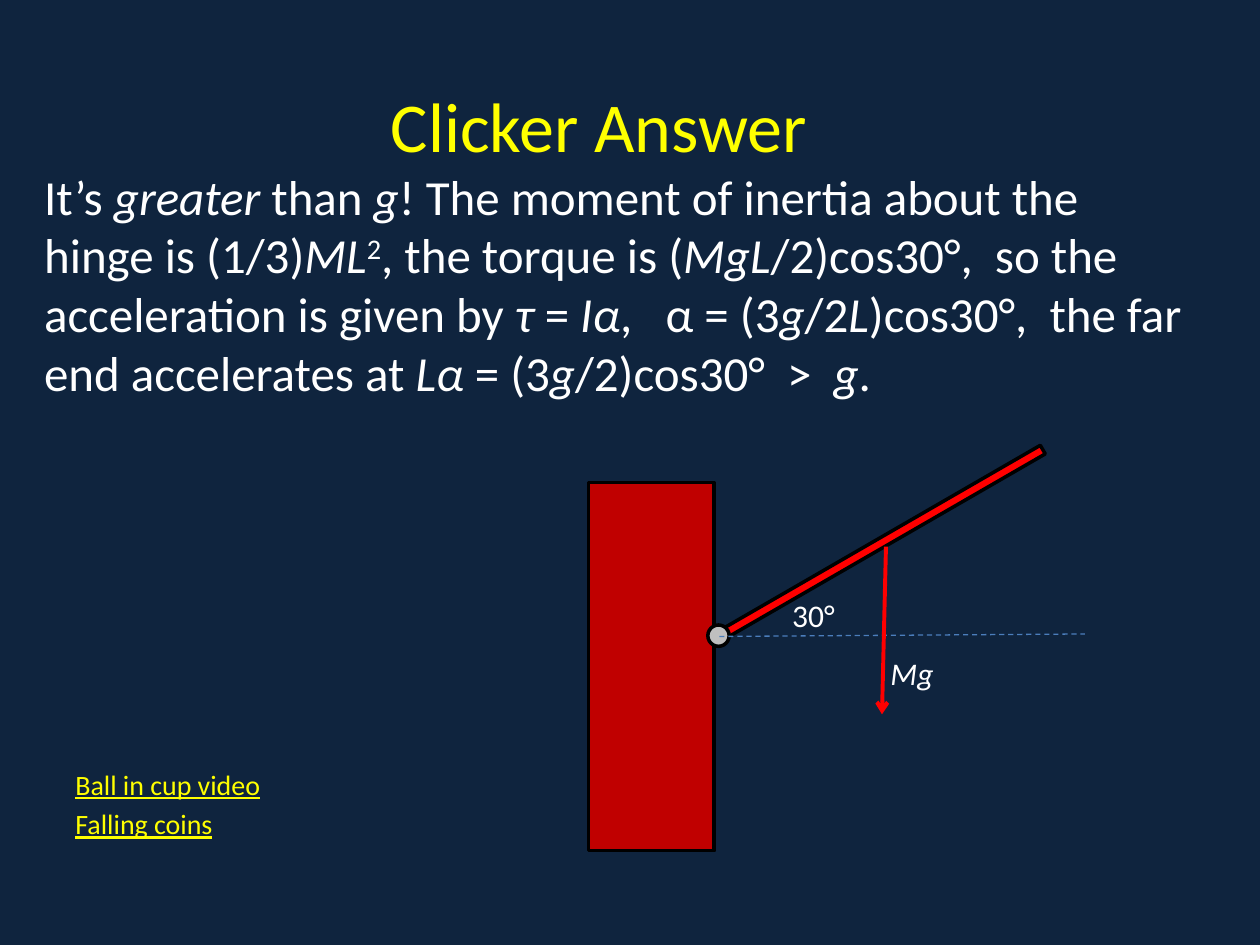
from dataclasses import dataclass, field
from typing import Optional

from lxml.etree import SubElement
from pptx import Presentation
from pptx.dml.color import RGBColor
from pptx.enum.dml import MSO_LINE_DASH_STYLE as Dash
from pptx.enum.shapes import MSO_CONNECTOR_TYPE as Connector, MSO_SHAPE as Preset
from pptx.enum.text import MSO_ANCHOR as Anchor
from pptx.oxml.ns import qn
from pptx.util import Cm, Pt

FONT = "Calibri"
YELLOW, WHITE, BLACK, RED = "FFFF00", "FFFFFF", "000000", "FF0000"


@dataclass
class Span:
    text: str
    format: dict = field(default_factory=dict)
    superscript: bool = False


@dataclass
class Paragraph:
    spans: list[Span]
    size: float
    color: str
    indent: float = 0
    space_after: float = 0


@dataclass
class TextBlock:
    left: float
    top: float
    width: float
    height: float
    paragraphs: list[Paragraph]
    anchor: Anchor = Anchor.TOP


@dataclass
class Body:
    preset: Preset
    left: float
    top: float
    width: float
    height: float
    fill: str
    rotation: float = 0


@dataclass
class Stroke:
    start: tuple[float, float]
    end: tuple[float, float]
    color: str
    weight: float
    dash: Optional[Dash] = None
    arrow: bool = False


def paint(target, color: str) -> None:
    target.rgb = RGBColor.from_string(color)


def italic(text: str) -> Span:
    return Span(text, {"italic": True})


def link(text: str, space_after: float = 0) -> Paragraph:
    return Paragraph([Span(text, {"underline": True})], 16, YELLOW, space_after=space_after)


def label(left: float, top: float, span: Span) -> TextBlock:
    return TextBlock(left, top, 1.9, 1.02, [Paragraph([span], 18, WHITE)])


def draw_text(page, block: TextBlock) -> None:
    box = page.shapes.add_textbox(Cm(block.left), Cm(block.top), Cm(block.width), Cm(block.height))
    frame = box.text_frame
    frame.word_wrap = True
    frame.vertical_anchor = block.anchor
    for index, content in enumerate(block.paragraphs):
        para = frame.add_paragraph() if index else frame.paragraphs[0]
        para.space_after = Pt(content.space_after)
        para._p.get_or_add_pPr().set("marL", str(Cm(content.indent)))
        for span in content.spans:
            run = para.add_run()
            run.text = span.text
            values = {"name": FONT, "size": Pt(content.size), **span.format}
            for name, value in values.items():
                setattr(run.font, name, value)
            paint(run.font.color, content.color)
            if span.superscript:
                run._r.get_or_add_rPr().set("baseline", "30000")


def draw_body(page, body: Body) -> None:
    shape = page.shapes.add_shape(
        body.preset, Cm(body.left), Cm(body.top), Cm(body.width), Cm(body.height)
    )
    shape.rotation = body.rotation
    shape.shadow.inherit = False
    shape.fill.solid()
    paint(shape.fill.fore_color, body.fill)
    shape.line.width = Pt(2)
    paint(shape.line.color, BLACK)


def draw_stroke(page, stroke: Stroke) -> None:
    points = [Cm(value) for value in (*stroke.start, *stroke.end)]
    connector = page.shapes.add_connector(Connector.STRAIGHT, *points)
    line = connector.line
    line.width = Pt(stroke.weight)
    paint(line.color, stroke.color)
    if stroke.dash:
        line.dash_style = stroke.dash
    properties = connector._element.spPr
    if stroke.arrow:
        SubElement(properties.find(qn("a:ln")), qn("a:tailEnd"), type="arrow")
    SubElement(properties, qn("a:effectLst"))


HEADING = Paragraph([Span("Clicker Answer")], 40, YELLOW, indent=6.99)
ANSWER = Paragraph(
    [
        Span("It’s "), italic("greater "), Span("than "), italic("g"),
        Span("! The moment of inertia about the hinge is (1/3)"), italic("ML"),
        Span("2", superscript=True), Span(", the torque is ("), italic("MgL"),
        Span("/2)cos30°,  so the acceleration is given by "), italic("τ"),
        Span(" = "), italic("Iα"), Span(",   α = (3"), italic("g"), Span("/2"),
        italic("L"), Span(")cos30°,  the far end accelerates at "), italic("Lα"),
        Span(" = (3"), italic("g"), Span("/2)cos30°  >  "), italic("g"), Span("."),
    ],
    28,
    WHITE,
)
TEXTS = [
    TextBlock(0.64, 0.43, 23.5, 8.89, [HEADING, ANSWER], Anchor.MIDDLE),
    TextBlock(1.27, 15.34, 22.86, 2, [link("Ball in cup video", 3.2), link("Falling coins")]),
]
BODIES = [
    Body(Preset.RECTANGLE, 11.86, 9.73, 2.54, 7.42, "C00000"),
    Body(Preset.RECTANGLE, 14.1, 10.82, 7.42, 0.2, RED, rotation=330),
    Body(Preset.OVAL, 14.27, 12.6, 0.43, 0.43, "BFBFBF"),
]
STROKES = [
    Stroke((14.5, 12.83), (21.87, 12.78), "4B7EBC", 0.75, dash=Dash.DASH),
    Stroke((17.86, 11.02), (17.78, 14.4), RED, 2.25, arrow=True),
]
LABELS = [label(15.72, 11.89, Span("30°")), label(17.7, 13.06, italic("Mg"))]


def main() -> None:
    deck = Presentation()
    deck.slide_width, deck.slide_height = Cm(25.4), Cm(19.05)
    page = deck.slides.add_slide(deck.slide_layouts[6])
    page.background.fill.solid()
    paint(page.background.fill.fore_color, "0F243E")
    for block in TEXTS:
        draw_text(page, block)
    for body in BODIES:
        draw_body(page, body)
    for stroke in STROKES:
        draw_stroke(page, stroke)
    for block in LABELS:
        draw_text(page, block)
    deck.save("out.pptx")


if __name__ == "__main__":
    main()
